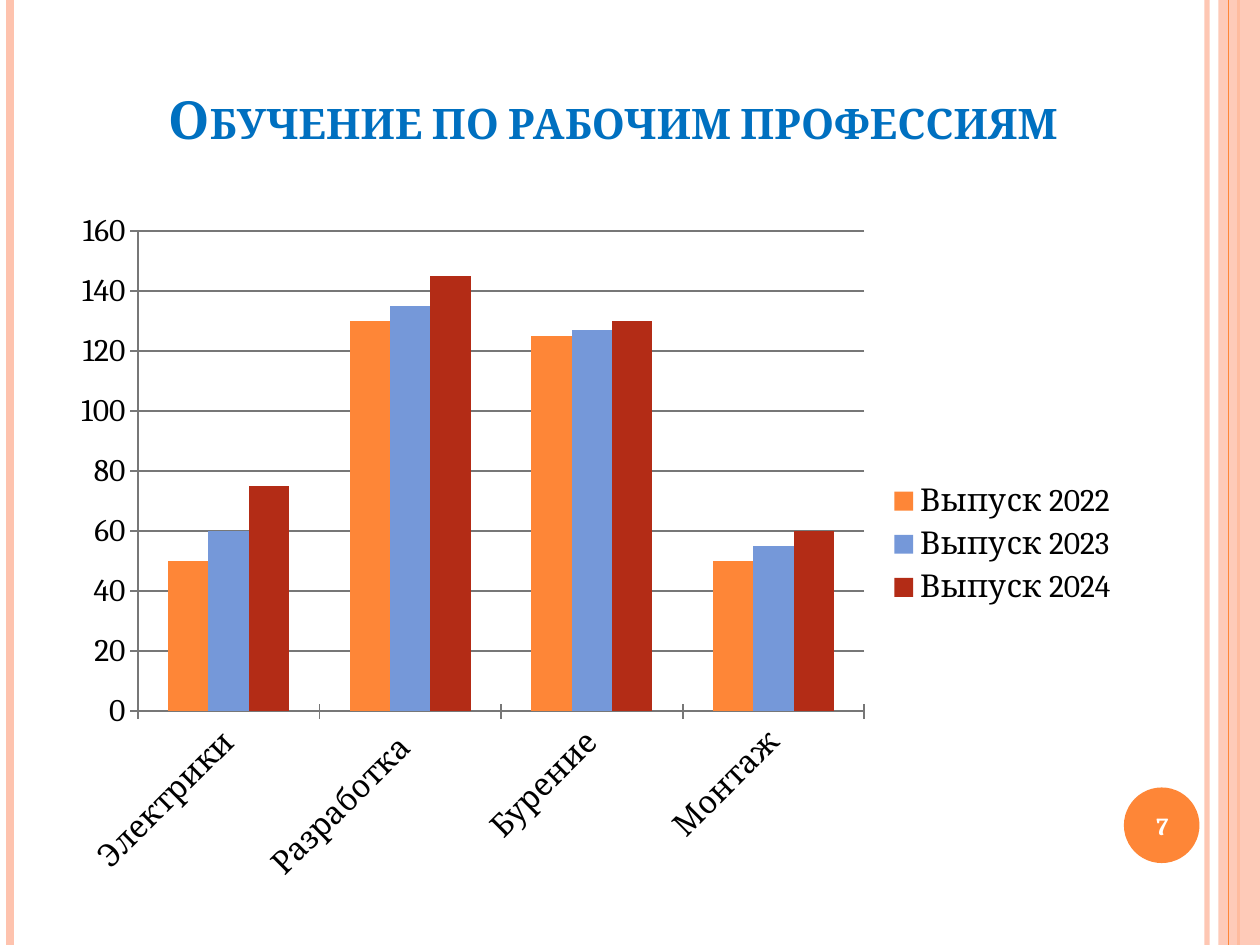
from dataclasses import dataclass

from lxml.etree import SubElement
from pptx import Presentation
from pptx.chart.data import CategoryChartData
from pptx.dml.color import RGBColor
from pptx.enum.chart import XL_CHART_TYPE as ChartType, XL_LEGEND_POSITION as LegendPosition
from pptx.enum.chart import XL_TICK_MARK as TickMark
from pptx.enum.shapes import MSO_CONNECTOR as Connector, MSO_SHAPE as Shape
from pptx.enum.text import MSO_ANCHOR as Anchor, PP_ALIGN as Align
from pptx.oxml import parse_xml
from pptx.oxml.ns import nsdecls, qn
from pptx.util import Inches, Pt


@dataclass(frozen=True)
class Theme:
    font: str = "Cambria"
    title: str = "0070C0"
    text: str = "000000"
    light_text: str = "FFFFFF"
    accent: str = "FE8637"
    pale: str = "FEC3AE"
    grid: str = "777777"
    series: tuple = ("FE8637", "7598D9", "B32C16")
    title_size: int = 30
    chart_size: int = 18
    number_size: int = 14


def color(value):
    return RGBColor.from_string(value)


def set_alpha(fill_parent, percent):
    """Make the solid fill below the given element partly transparent."""
    rgb = next(fill_parent.iter(qn("a:srgbClr")))
    SubElement(rgb, qn("a:alpha"), val=str(percent * 1000))


def write_text(frame, text, *, font, size, fill, bold=True, small_caps=False,
               anchor=Anchor.MIDDLE):
    frame.word_wrap = True
    frame.vertical_anchor = anchor
    paragraph = frame.paragraphs[0]
    paragraph.alignment = Align.CENTER
    run = paragraph.add_run()
    run.text = text
    run.font.name, run.font.size, run.font.bold = font, Pt(size), bold
    run.font.color.rgb = color(fill)
    if small_caps:
        run.font._element.set("cap", "small")


class SlideBuilder:
    def __init__(self, slide, theme):
        self.slide = slide
        self.theme = theme

    def vertical_line(self, x, width, fill, alpha=None):
        line = self.slide.shapes.add_connector(
            Connector.STRAIGHT, Inches(x), Inches(0), Inches(x), Inches(7.5))
        line.line.color.rgb = color(fill)
        line.line.width = Pt(width)
        properties = line._element.spPr
        if alpha is not None:
            set_alpha(properties, alpha)
        SubElement(properties, qn("a:effectLst"))

    def shape(self, kind, box, fill, alpha=None):
        shape = self.slide.shapes.add_shape(kind, *map(Inches, box))
        shape.shadow.inherit = False
        shape.fill.solid()
        shape.fill.fore_color.rgb = color(fill)
        shape.line.fill.background()
        if alpha is not None:
            set_alpha(shape._element.spPr, alpha)

    def text(self, box, text, **style):
        text_box = self.slide.shapes.add_textbox(*map(Inches, box))
        write_text(text_box.text_frame, text, font=self.theme.font, **style)

    def column_chart(self, box, categories, series, plot_layout):
        data = CategoryChartData()
        data.categories = categories
        for name, values in series.items():
            data.add_series(name, values)
        chart = self.slide.shapes.add_chart(
            ChartType.COLUMN_CLUSTERED, *map(Inches, box), data).chart
        chart.has_title = False
        chart.font.name = self.theme.font
        chart.font.size = Pt(self.theme.chart_size)
        chart.font.color.rgb = color(self.theme.text)

        # Columns
        plot = chart.plots[0]
        plot.vary_by_categories = False
        plot.gap_width, plot.overlap = 150, 0
        for column, fill in zip(plot.series, self.theme.series):
            column.format.fill.solid()
            column.format.fill.fore_color.rgb = color(fill)

        # Axes and gridlines
        value_axis, category_axis = chart.value_axis, chart.category_axis
        value_axis.minimum_scale, value_axis.maximum_scale = 0, 160
        value_axis.major_unit = 20
        value_axis.has_major_gridlines = True
        for part in (value_axis, category_axis, value_axis.major_gridlines):
            part.format.line.color.rgb = color(self.theme.grid)
            part.format.line.width = Pt(1)
        for axis in (value_axis, category_axis):
            axis.major_tick_mark = TickMark.CROSS
            font = axis.tick_labels.font
            font.name, font.size = self.theme.font, Pt(self.theme.chart_size)
            font.color.rgb = color(self.theme.text)
        label_body = next(category_axis._element.iter(qn("a:bodyPr")))
        label_body.set("rot", str(-45 * 60000))
        label_body.set("vert", "horz")

        # Legend
        chart.has_legend = True
        chart.legend.position = LegendPosition.RIGHT
        chart.legend.include_in_layout = False

        # Inner plot area, in fractions of the chart
        plot_area = chart._chartSpace.chart.plotArea
        for layout in plot_area.findall(qn("c:layout")):
            plot_area.remove(layout)
        places = "".join(f'<c:{key} val="{value}"/>' for key, value in plot_layout.items())
        plot_area.insert(0, parse_xml(
            f'<c:layout {nsdecls("c")}><c:manualLayout><c:layoutTarget val="inner"/>'
            f'<c:xMode val="edge"/><c:yMode val="edge"/>{places}'
            '</c:manualLayout></c:layout>'))


def main():
    theme = Theme()
    presentation = Presentation()
    presentation.slide_width, presentation.slide_height = Inches(10), Inches(7.5)
    slide = presentation.slides.add_slide(presentation.slide_layouts[6])
    builder = SlideBuilder(slide, theme)

    # Side stripes and number badge
    builder.vertical_line(9.58, 3, theme.pale, alpha=93)
    builder.vertical_line(0.08, 4.5, theme.pale)
    builder.vertical_line(9.83, 1.5, theme.accent)
    builder.shape(Shape.RECTANGLE, (9.67, 0, 0.33, 7.5), theme.pale, alpha=87)
    builder.vertical_line(9.75, 0.75, theme.accent)
    builder.shape(Shape.OVAL, (8.92, 6.25, 0.6, 0.6), theme.accent)

    # Title
    builder.text((0.78, 0.47, 8.17, 0.77), "Обучение по рабочим профессиям",
                 size=theme.title_size, fill=theme.title, small_caps=True,
                 anchor=Anchor.BOTTOM)

    # Graduates by trade
    builder.column_chart(
        (0.5, 1.56, 8.48, 5.52),
        ("Электрики", "Разработка ", "Бурение", "Монтаж"),
        {
            "Выпуск 2022": (50, 130, 125, 50),
            "Выпуск 2023": (60, 135, 127, 55),
            "Выпуск 2024": (75, 145, 130, 60),
        },
        {"x": 0.07, "y": 0.05, "w": 0.68, "h": 0.69})

    # Slide number
    builder.text((8.89, 6.27, 0.67, 0.57), "7",
                 size=theme.number_size, fill=theme.light_text)

    presentation.save("out.pptx")


if __name__ == "__main__":
    main()
